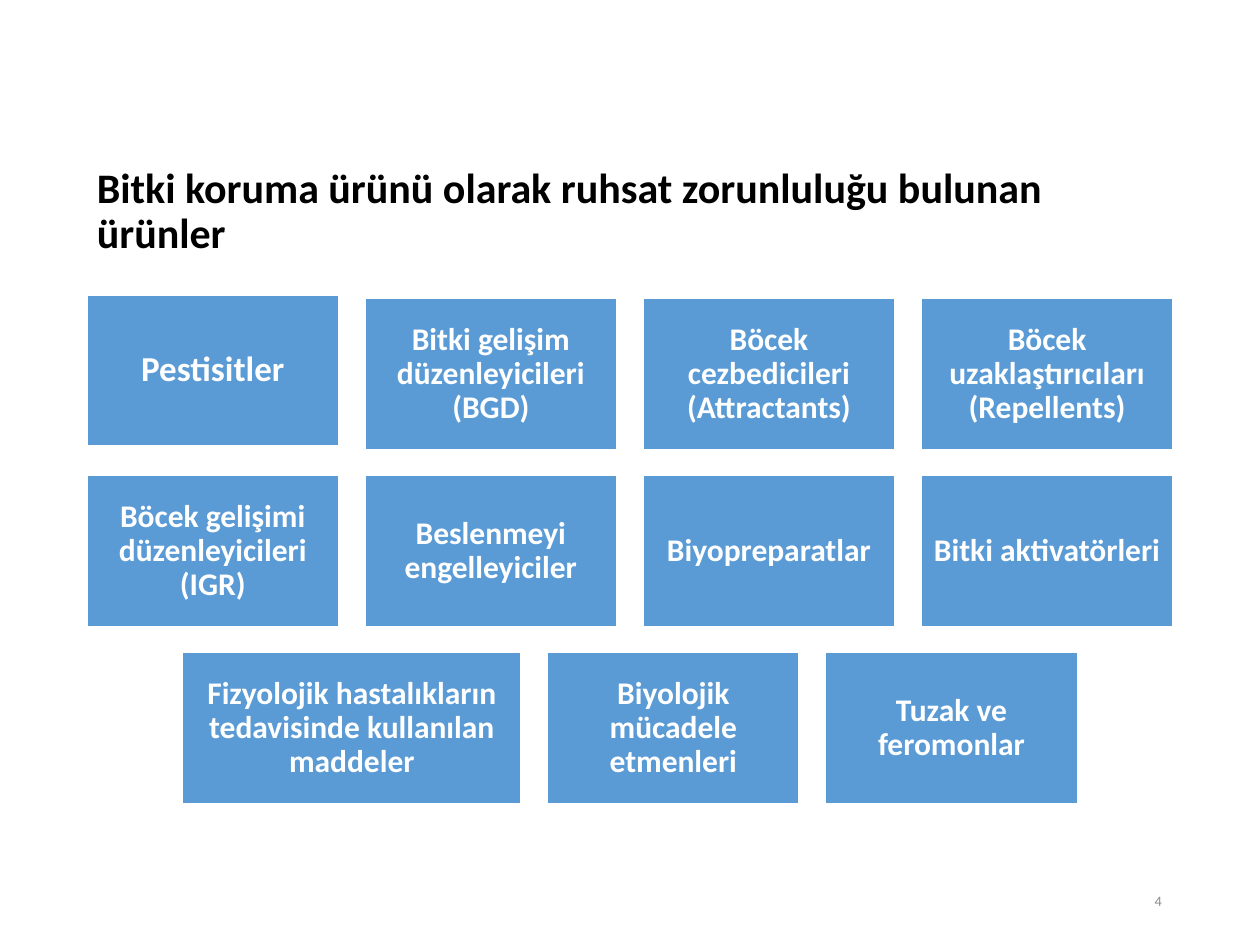
from dataclasses import dataclass

import pptx
import pptx.dml.color
import pptx.enum.shapes
import pptx.enum.text
import pptx.util

Inches = pptx.util.Inches
Align = pptx.enum.text.PP_ALIGN


@dataclass(frozen=True)
class Theme:
    font: str = "Calibri"
    ink: str = "000000"
    muted: str = "8C8C8C"
    card: str = "5B9BD5"
    paper: str = "FFFFFF"
    title_size: float = 24
    lead_size: float = 20
    card_size: float = 18
    number_size: float = 8.2


@dataclass(frozen=True)
class Box:
    """A rectangle in inches."""
    left: float
    top: float
    width: float
    height: float

    def lengths(self):
        return [Inches(v) for v in (self.left, self.top, self.width, self.height)]


@dataclass(frozen=True)
class Card:
    text: str
    width: float = 2
    size: float = Theme.card_size
    inset: float = 0.07
    lift: float = 0


THEME = Theme()
CARD_HEIGHT = 1.2
CARD_GAP = 0.207

CARD_ROWS = [
    [
        Card("Pestisitler", size=THEME.lead_size, inset=0.08, lift=0.03),
        Card("Bitki gelişim düzenleyicileri (BGD)"),
        Card("Böcek cezbedicileri (Attractants)"),
        Card("Böcek uzaklaştırıcıları (Repellents)"),
    ],
    [
        Card("Böcek gelişimi düzenleyicileri (IGR)"),
        Card("Beslenmeyi engelleyiciler"),
        Card("Biyopreparatlar"),
        Card("Bitki aktivatörleri"),
    ],
    [
        Card("Fizyolojik hastalıkların tedavisinde kullanılan maddeler", width=2.69),
        Card("Biyolojik mücadele etmenleri"),
        Card("Tuzak ve feromonlar"),
    ],
]


def color(value):
    return pptx.dml.color.RGBColor.from_string(value)


def write_text(shape, text, size, ink, bold=False, align=Align.LEFT, spacing=0.9):
    frame = shape.text_frame
    frame.word_wrap = True
    frame.vertical_anchor = pptx.enum.text.MSO_ANCHOR.MIDDLE
    paragraph = frame.paragraphs[0]
    paragraph.alignment = align
    paragraph.line_spacing = spacing
    run = paragraph.add_run()
    run.text = text
    run.font.name = THEME.font
    run.font.size = pptx.util.Pt(size)
    run.font.bold = bold
    run.font.color.rgb = color(ink)


def add_title(slide, box, text):
    shape = slide.shapes.add_textbox(*box.lengths())
    write_text(shape, text, THEME.title_size, THEME.ink, bold=True)


def add_slide_number(slide, box, number):
    shape = slide.shapes.add_textbox(*box.lengths())
    write_text(shape, number, THEME.number_size, THEME.muted,
               align=Align.RIGHT, spacing=1.0)


def add_card(slide, box, card):
    shape = slide.shapes.add_shape(
        pptx.enum.shapes.MSO_SHAPE.RECTANGLE, *box.lengths())
    shape.shadow.inherit = False
    shape.fill.solid()
    shape.fill.fore_color.rgb = color(THEME.card)
    shape.line.color.rgb = color(THEME.paper)
    shape.line.width = pptx.util.Pt(1)
    frame = shape.text_frame
    frame.margin_left = frame.margin_right = Inches(card.inset)
    frame.margin_top = frame.margin_bottom = Inches(card.inset)
    write_text(shape, card.text, card.size, THEME.paper, bold=True,
               align=Align.CENTER)


def add_card_grid(slide, box, rows):
    """Spread the rows evenly down the box and centre each one across it."""
    pitch = (box.height - CARD_HEIGHT) / (len(rows) - 1)
    for index, row in enumerate(rows):
        row_width = sum(card.width for card in row) + CARD_GAP * (len(row) - 1)
        left = box.left + (box.width - row_width) / 2
        top = box.top + index * pitch
        for card in row:
            add_card(slide, Box(left, top - card.lift, card.width, CARD_HEIGHT), card)
            left += card.width + CARD_GAP


def main():
    presentation = pptx.Presentation()
    presentation.slide_width = Inches(10)
    presentation.slide_height = Inches(7.5)
    slide = presentation.slides.add_slide(presentation.slide_layouts[6])
    add_title(slide, Box(0.67, 1.15, 8.62, 1.07),
              "Bitki koruma ürünü olarak ruhsat zorunluluğu bulunan ürünler")
    add_card_grid(slide, Box(0.69, 2.37, 8.62, 4.01), CARD_ROWS)
    add_slide_number(slide, Box(7.07, 6.95, 2.25, 0.4), "4")
    presentation.save("out.pptx")


if __name__ == "__main__":
    main()
